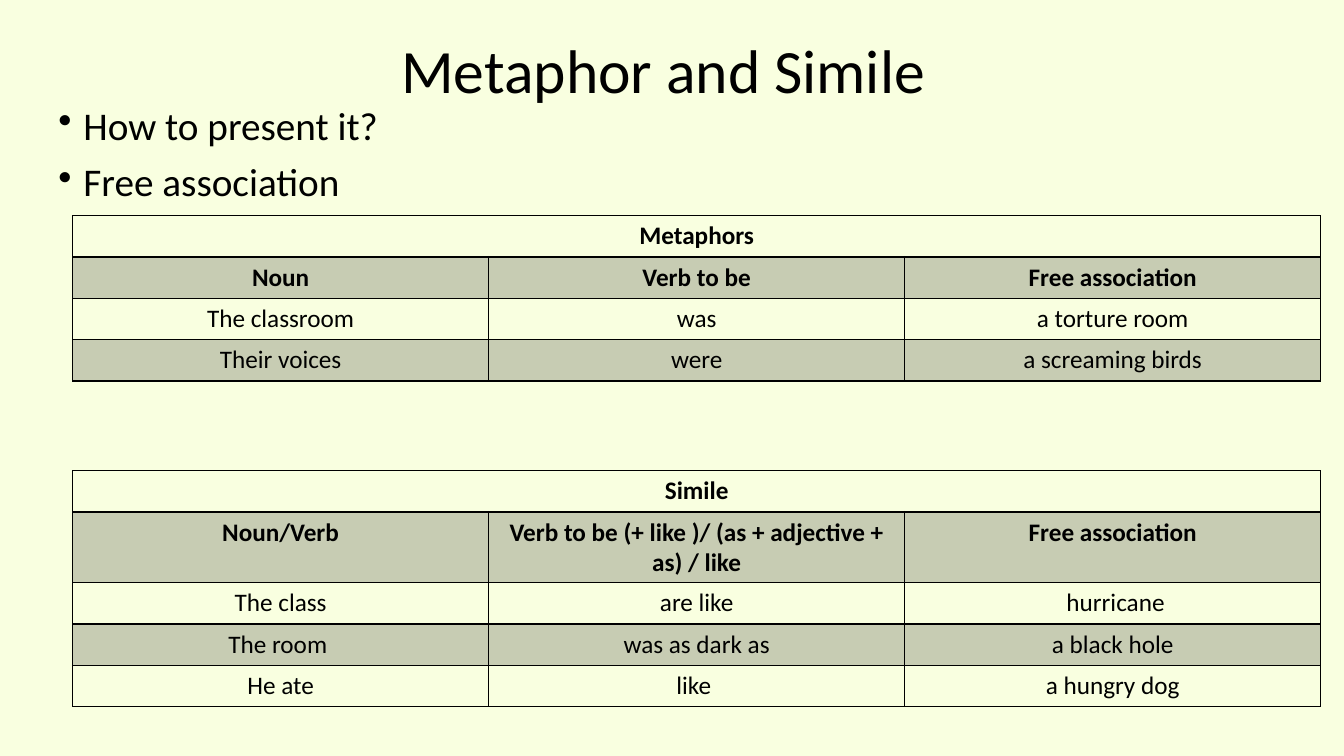
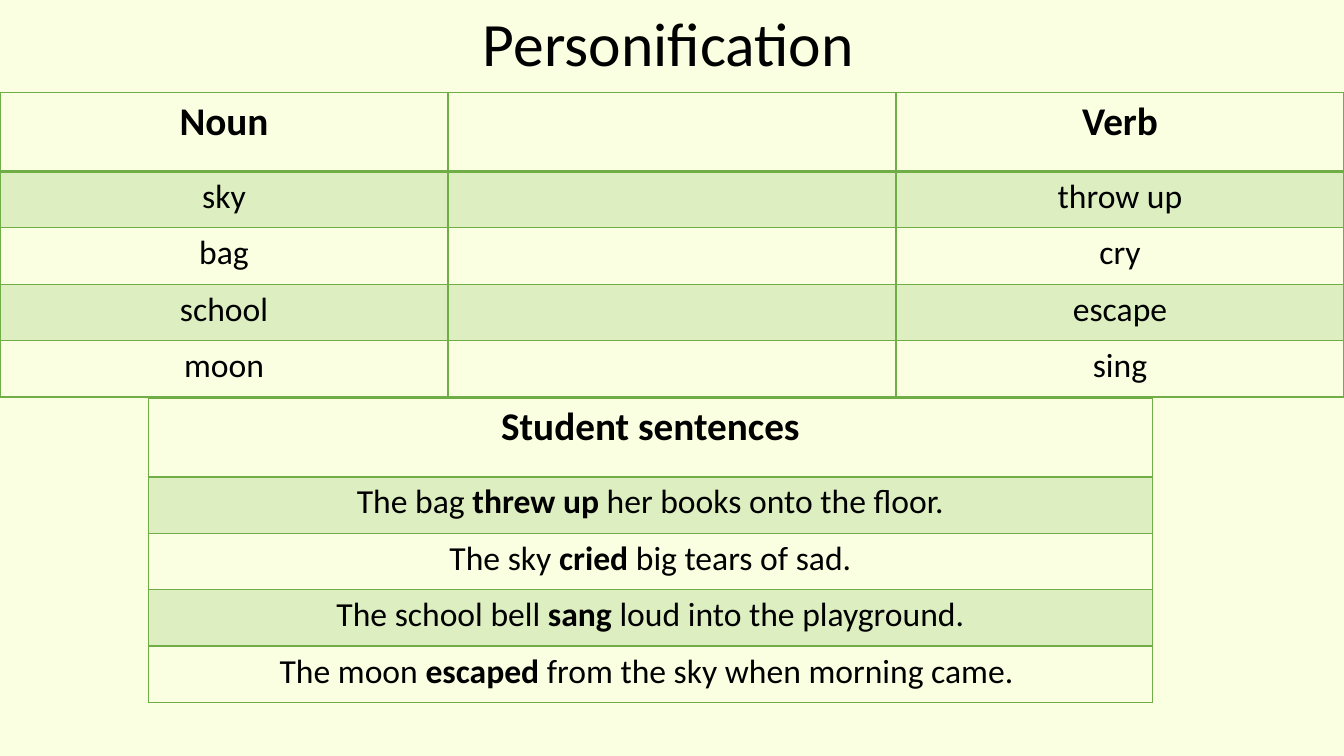
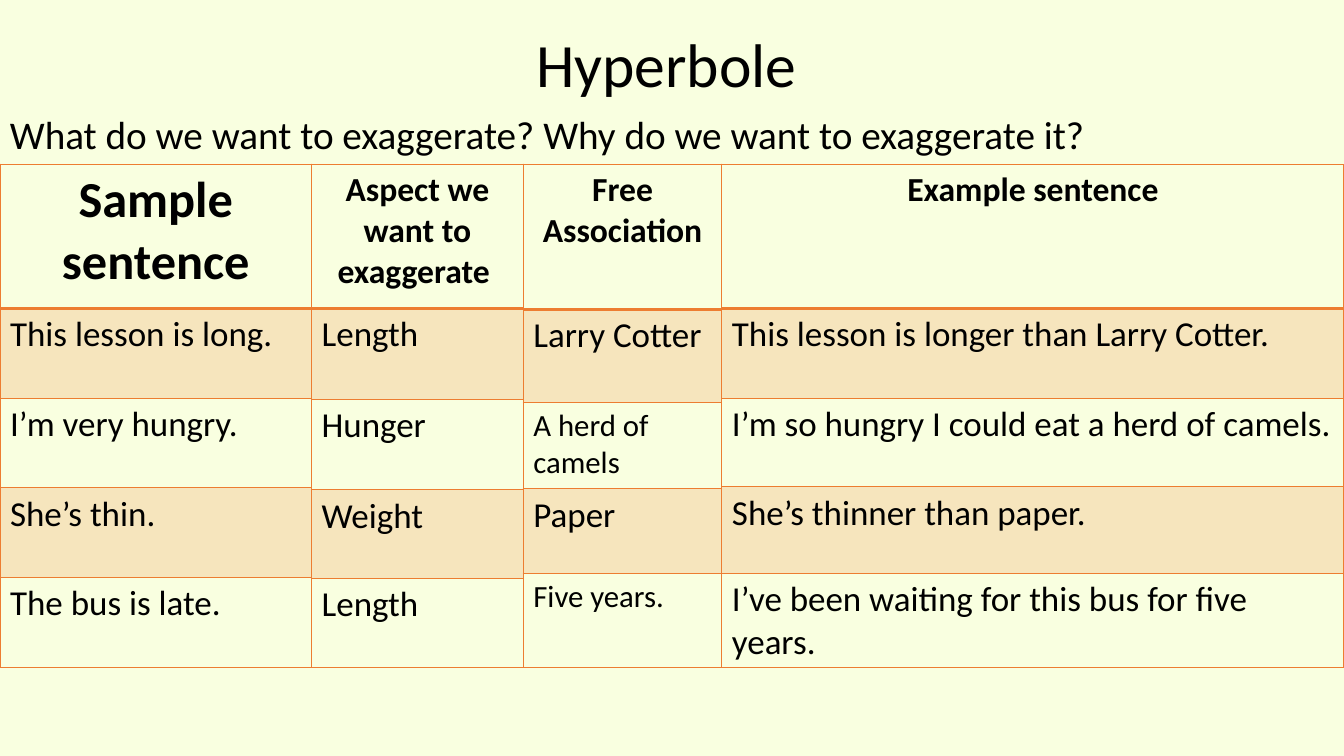
import pptx
import pptx.dml.color
import pptx.enum.text
import pptx.oxml
import pptx.oxml.ns
import pptx.util
from pptx.util import Inches

RGBColor = pptx.dml.color.RGBColor
ALIGN = pptx.enum.text.PP_ALIGN
ANCHOR = pptx.enum.text.MSO_ANCHOR

# Shared look
CREAM = RGBColor(0xF9, 0xFF, 0xE0)
BLACK = RGBColor(0x00, 0x00, 0x00)
GREEN = RGBColor(0x70, 0xAD, 0x47)
ORANGE = RGBColor(0xED, 0x7D, 0x31)
FONT = "Calibri"
TITLE_SIZE = 44
TEXT_SIZE = 28
SLIDE_WIDTH = 13.33
SLIDE_HEIGHT = 7.5
BAND_ALPHA = 20000
NAMESPACE = pptx.oxml.ns.nsdecls("a")


def style_paragraph(paragraph, size, bold=False, align=ALIGN.LEFT):
    paragraph.alignment = align
    font = paragraph.font
    font.name, font.size, font.bold = FONT, pptx.util.Pt(size), bold
    font.color.rgb = BLACK


def add_text(slide, box, lines, size, align=ALIGN.LEFT, anchor=ANCHOR.TOP,
             line_spacing=1.0, bulleted=False):
    """Place plain or bulleted lines in box (left, top, width, height)."""
    frame = slide.shapes.add_textbox(*map(Inches, box)).text_frame
    frame.word_wrap = True
    frame.vertical_anchor = anchor
    for index, line in enumerate(lines):
        paragraph = frame.add_paragraph() if index else frame.paragraphs[0]
        paragraph.text = line
        style_paragraph(paragraph, size, align=align)
        paragraph.line_spacing = line_spacing
        if bulleted:
            paragraph.space_before = pptx.util.Pt(10)
            add_bullet(paragraph)


def add_bullet(paragraph):
    properties = paragraph._p.get_or_add_pPr()
    properties.set("marL", str(Inches(0.25)))
    properties.set("indent", str(-Inches(0.25)))
    bullet = pptx.oxml.parse_xml(f'<a:buChar {NAMESPACE} char="•"/>')
    properties.insert_element_before(bullet, "a:tabLst", "a:defRPr", "a:extLst")


def add_title(slide, box, text, **options):
    add_text(slide, box, [text], TITLE_SIZE, ALIGN.CENTER, **options)


def set_borders(cell, color, top, bottom):
    """Line all four sides; top and bottom give widths in points."""
    properties = cell._tc.get_or_add_tcPr()
    for side, width in (("L", 1), ("R", 1), ("T", top), ("B", bottom)):
        properties.append(pptx.oxml.parse_xml(
            f'<a:ln{side} {NAMESPACE} w="{pptx.util.Pt(width)}"><a:solidFill>'
            f'<a:srgbClr val="{color}"/></a:solidFill></a:ln{side}>'))


def set_band(cell, color, shaded):
    if not shaded:
        cell.fill.background()
        return
    cell.fill.solid()
    cell.fill.fore_color.rgb = color
    for value in cell._tc.tcPr.iterfind("a:solidFill/a:srgbClr", {
            "a": pptx.oxml.ns.namespaces("a")["a"]}):
        value.append(pptx.oxml.parse_xml(
            f'<a:alpha {NAMESPACE} val="{BAND_ALPHA}"/>'))


def fill_cell(cell, content, size, bold, align):
    """Write a text, or a tuple of runs in which every second one is bold."""
    paragraph = cell.text_frame.paragraphs[0]
    style_paragraph(paragraph, size, bold, align)
    if isinstance(content, str):
        if content:
            paragraph.add_run().text = content
        return
    for index, text in enumerate(content):
        run = paragraph.add_run()
        run.text = text
        run.font.bold = index % 2 == 1


def add_banded_table(slide, left, top, width, heights, rows, color,
                     header_size, size, bold_rows=1, align=ALIGN.CENTER,
                     sizes=None):
    """Equal columns, a ruled header and every second row shaded.

    A one-cell first row spans all columns; sizes overrides rows by index.
    """
    column_count = max(map(len, rows))
    table = slide.shapes.add_table(
        len(rows), column_count, Inches(left), Inches(top),
        Inches(width), Inches(sum(heights))).table
    table.first_row = table.horz_banding = False
    for column in table.columns:
        column.width = Inches(width / column_count)
    for row_index, (texts, height) in enumerate(zip(rows, heights)):
        table.rows[row_index].height = Inches(height)
        is_bold = row_index < bold_rows
        row_size = header_size if is_bold else (sizes or {}).get(row_index, size)
        for column_index in range(column_count):
            cell = table.cell(row_index, column_index)
            set_borders(cell, color, 2 if row_index == 1 else 1,
                        2 if row_index == 0 else 1)
            set_band(cell, color, row_index % 2 == 1)
            content = texts[column_index] if column_index < len(texts) else ""
            fill_cell(cell, content, row_size, is_bold,
                      ALIGN.CENTER if is_bold else align)
    if len(rows[0]) < column_count:
        table.cell(0, 0).merge(table.cell(0, column_count - 1))


def build_metaphor_slide(slide):
    add_title(slide, (0.9, 0, 11.5, 1.45), "Metaphor and Simile ",
              anchor=ANCHOR.MIDDLE, line_spacing=0.9)
    add_text(slide, (0.48, 1.01, 11.5, 4.76),
             ["How to present it?", "Free association"], TEXT_SIZE,
             line_spacing=0.9, bulleted=True)
    metaphors = [
        ["Metaphors"],
        ["Noun", "Verb to be", "Free association"],
        ["The classroom", "was", "a torture room"],
        ["Their voices", "were", "a screaming birds"],
    ]
    similes = [
        ["Simile"],
        ["Noun/Verb", "Verb to be (+ like )/ (as + adjective + as) / like",
         "Free association"],
        ["The class", "are like", " hurricane"],
        ["The room ", "was as dark as", "a black hole"],
        ["He ate", "like ", "a hungry dog"],
    ]
    for top, rows in ((2.14, metaphors), (4.67, similes)):
        add_banded_table(slide, 0.72, top, 12.38, [0.41] * len(rows), rows,
                         BLACK, 18, 18, bold_rows=2)


def build_personification_slide(slide):
    add_title(slide, (1.59, 0, 10.08, 0.84), "Personification")
    words = [
        ["Noun", "", "Verb"],
        ["sky", "", "throw up"],
        ["bag", "", "cry"],
        ["school", "", "escape"],
        ["moon", "", "sing"],
    ]
    sentences = [
        ["Student sentences"],
        [("The bag ", "threw up ", "her books onto the floor.")],
        [("The sky ", "cried", " big tears of sad.")],
        [("The school bell ", "sang", " loud into the playground.")],
        [("The moon ", "escaped", " from the sky when morning came. ")],
    ]
    heights = [0.78] + [0.56] * 4
    for left, top, width, rows in ((0, 0.92, SLIDE_WIDTH, words),
                                   (1.47, 3.95, 9.96, sentences)):
        add_banded_table(slide, left, top, width, heights, rows, GREEN,
                         TEXT_SIZE, 24)


def build_hyperbole_slide(slide):
    add_title(slide, (0.8, 0.21, 11.62, 0.84), "Hyperbole")
    add_text(slide, (0, 1.05, 11.49, 0.57),
             ["What do we want to exaggerate? Why do we want to exaggerate it?"],
             TEXT_SIZE)
    # Width, header size, row heights, size overrides, texts
    columns = [
        (3.09, 36, [1.43, 0.89, 0.89, 0.89, 0.89], {},
         ["Sample sentence", "This lesson is long.", "I’m very hungry.",
          "She’s thin.", "The bus is late."]),
        (2.1, 24, [1.43, 0.9, 0.9, 0.88, 0.88], {},
         ["Aspect we want to exaggerate ", "Length", "Hunger", "Weight",
          "Length"]),
        (1.97, 24, [1.44, 0.92, 0.86, 0.84, 0.93], {2: 22, 4: 22},
         ["Free Association", "Larry Cotter", "A herd of camels", "Paper",
          "Five years."]),
        (6.17, 24, [1.43, 0.89, 0.88, 0.86, 0.93], {},
         ["Example sentence", "This lesson is longer than Larry Cotter.",
          "I’m so hungry I could eat a herd of camels.",
          "She’s thinner than paper.",
          "I’ve been waiting for this bus for five years."]),
    ]
    left = 0
    for width, header_size, heights, sizes, texts in columns:
        add_banded_table(slide, left, 1.63, width, heights,
                         [[text] for text in texts], ORANGE, header_size, 25,
                         align=ALIGN.LEFT, sizes=sizes)
        left += width


def main():
    presentation = pptx.Presentation()
    presentation.slide_width = Inches(SLIDE_WIDTH)
    presentation.slide_height = Inches(SLIDE_HEIGHT)
    background = presentation.slide_master.background.fill
    background.solid()
    background.fore_color.rgb = CREAM
    blank = presentation.slide_layouts[6]
    for build in (build_metaphor_slide, build_personification_slide,
                  build_hyperbole_slide):
        build(presentation.slides.add_slide(blank))
    presentation.save("out.pptx")


if __name__ == "__main__":
    main()
